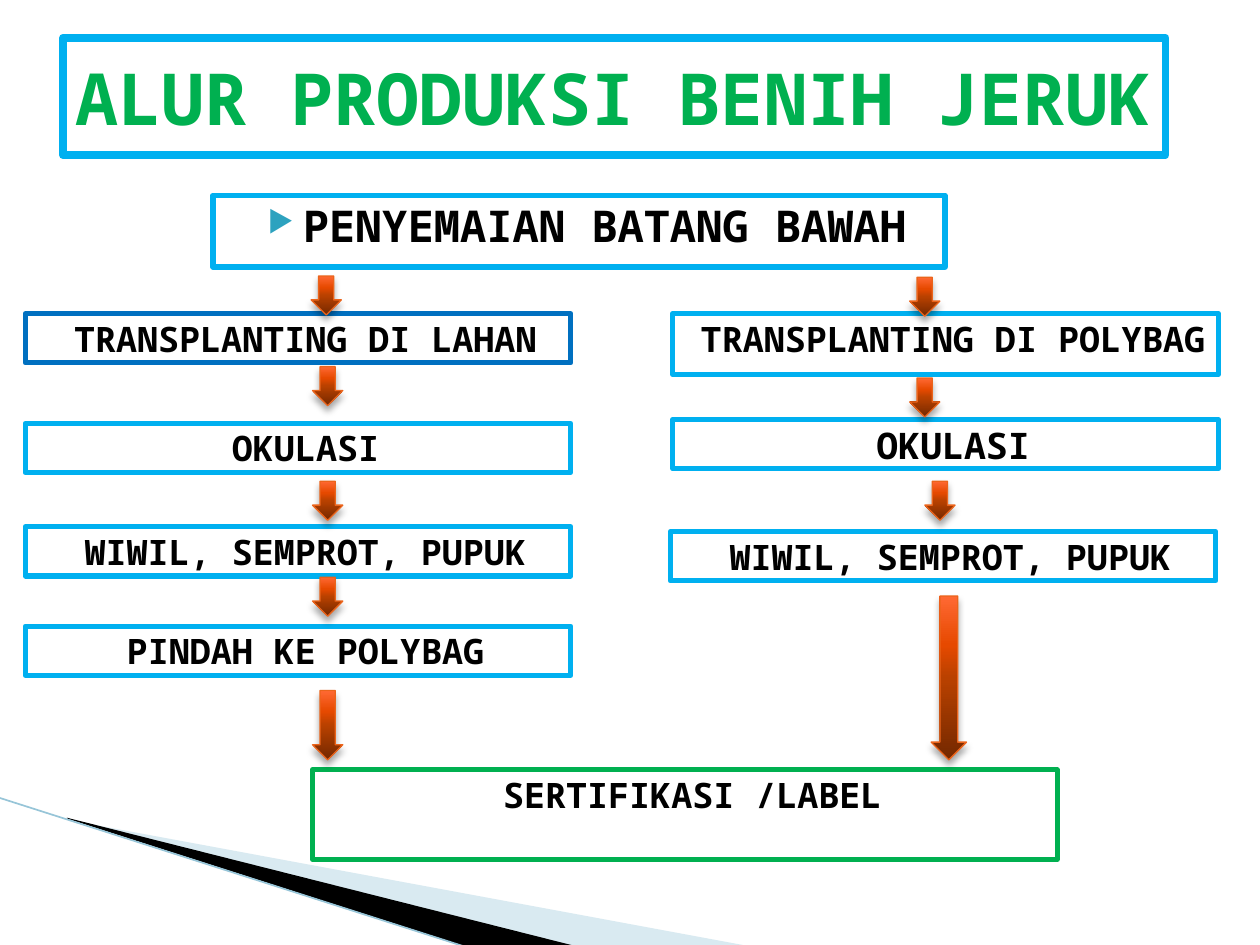
from lxml import etree
from pptx import Presentation, oxml
from pptx import util as u
from pptx.dml.color import RGBColor
from pptx.enum import shapes, text
from pptx.oxml.ns import qn

Pt = u.Pt
FONT = "Noto Sans Mono"
SKY, BLUE, GREEN = "00B0F0", "0070C0", "00B050"
NS = 'xmlns:a="http://schemas.openxmlformats.org/drawingml/2006/main"'
ARROW_STOPS = [(0, "732800"), (50, "B94100"), (70, "E64900"), (100, "FF6933")]
STEP_W, STEP_H = 311.8, 28.1
ARROW_W, ARROW_H = 17.3, 22.3


def rgb(value):
    return RGBColor.from_string(value)


def set_all(target, values):
    for name, value in values.items():
        setattr(target, name, value)


def add_box(slide, words, left, top, width, height, line=SKY, weight=3, size=20,
            color="000000", indent=8.6, hanging=0, fill="FFFFFF", bullet=None,
            align=text.PP_ALIGN.CENTER, anchor=text.MSO_ANCHOR.TOP):
    """Outlined rectangle with one line of bold text."""
    box = slide.shapes.add_shape(shapes.MSO_SHAPE.RECTANGLE,
                                 Pt(left), Pt(top), Pt(width), Pt(height))
    box.shadow.inherit = False
    if fill:
        box.fill.solid()
        box.fill.fore_color.rgb = rgb(fill)
    else:
        box.fill.background()
    box.line.color.rgb = rgb(line)
    box.line.width = Pt(weight)
    set_all(box.text_frame, {"word_wrap": True, "vertical_anchor": anchor,
                             "margin_left": Pt(7.2), "margin_right": Pt(7),
                             "margin_top": Pt(2), "margin_bottom": Pt(2)})
    label = box.text_frame.paragraphs[0]
    label.alignment = align
    props = label._p.get_or_add_pPr()
    props.set("marL", str(Pt(indent)))
    props.set("indent", str(Pt(hanging)))
    if bullet:
        tint = etree.SubElement(props, qn("a:buClr"))
        etree.SubElement(tint, qn("a:srgbClr"), val="2DA2BF")
        etree.SubElement(props, qn("a:buSzPct"), val="68000")
        etree.SubElement(props, qn("a:buChar"), char=bullet)
    run = label.add_run()
    run.text = words
    set_all(run.font, {"name": FONT, "size": Pt(size), "bold": True})
    run.font.color.rgb = rgb(color)


def add_arrow(slide, left, top, width=ARROW_W, height=ARROW_H):
    """Down arrow with an orange gradient and a soft shadow."""
    arrow = slide.shapes.add_shape(shapes.MSO_SHAPE.DOWN_ARROW,
                                   Pt(left), Pt(top), Pt(width), Pt(height))
    arrow.line.color.rgb = rgb("EB641B")
    arrow.line.width = Pt(0.75)
    stops = "".join(f'<a:gs pos="{pos * 1000}"><a:srgbClr val="{color}"/></a:gs>'
                    for pos, color in ARROW_STOPS)
    gradient = oxml.parse_xml(f'<a:gradFill {NS} rotWithShape="1"><a:gsLst>{stops}</a:gsLst>'
                              '<a:lin ang="16200000" scaled="0"/></a:gradFill>')
    shadow = oxml.parse_xml(
        f'<a:effectLst {NS}><a:outerShdw blurRad="{Pt(4)}" dist="{Pt(3)}" dir="5400000" '
        'rotWithShape="0"><a:srgbClr val="000000"><a:alpha val="35000"/></a:srgbClr>'
        '</a:outerShdw></a:effectLst>')
    props = arrow._element.spPr
    props.find(qn("a:prstGeom")).addnext(gradient)
    props.append(shadow)


def add_wedge(slide, points, color, opacity=100):
    """Filled polygon without an outline."""
    corners = [(Pt(x), Pt(y)) for x, y in points]
    builder = slide.shapes.build_freeform(*corners[0])
    builder.add_line_segments(corners[1:])
    wedge = builder.convert_to_shape()
    wedge.shadow.inherit = False
    wedge.fill.solid()
    wedge.fill.fore_color.rgb = rgb(color)
    wedge.line.fill.background()
    if opacity < 100:
        tint = wedge._element.spPr.find(qn("a:solidFill"))[0]
        etree.SubElement(tint, qn("a:alpha"), val=str(opacity * 1000))


def add_line(slide, x1, y1, x2, y2, color, weight):
    line = slide.shapes.add_connector(shapes.MSO_CONNECTOR.STRAIGHT,
                                      Pt(x1), Pt(y1), Pt(x2), Pt(y2))
    line.line.color.rgb = rgb(color)
    line.line.width = Pt(weight)
    etree.SubElement(line._element.spPr, qn("a:effectLst"))


def main():
    prs = Presentation()
    prs.slide_width, prs.slide_height = Pt(720), Pt(540)
    slide = prs.slides.add_slide(prs.slide_layouts[6])

    # Corner decoration
    add_wedge(slide, [(39.6, 468.7), (428.4, 540.7), (328.3, 540.7), (39.6, 468)],
              "A0CBDC", 40)
    add_wedge(slide, [(38.2, 467.3), (329, 540.7), (267.8, 541.4), (38.9, 468)], "000000")
    add_line(slide, -0.7, 455.8, 267.1, 541.4, "97C5D8", 0.95)

    # Title and starting step
    add_box(slide, "PENYEMAIAN BATANG BAWAH", 121.7, 111.6, 418.3, 41, size=25,
            indent=28.8, hanging=-20.2, bullet="▶")
    add_box(slide, "ALUR PRODUKSI BENIH JERUK", 36, 21.6, 630, 67, weight=4.5, size=41,
            color=GREEN, fill=None, indent=0, align=text.PP_ALIGN.LEFT,
            anchor=text.MSO_ANCHOR.MIDDLE)

    # Steps in the field (left) and in polybags (right)
    steps = [
        ("TRANSPLANTING DI LAHAN", 14.4, 179.3, STEP_H, BLUE, 20),
        ("OKULASI", 14.4, 241.9, STEP_H, SKY, 20),
        ("WIWIL, SEMPROT, PUPUK", 14.4, 301, STEP_H, SKY, 20),
        ("PINDAH KE POLYBAG", 14.4, 357.8, STEP_H, SKY, 20),
        ("TRANSPLANTING DI POLYBAG", 384.5, 179.3, 34.6, SKY, 20),
        ("OKULASI", 384.5, 239.8, STEP_H, SKY, 20.9),
        ("WIWIL, SEMPROT, PUPUK", 383, 303.8, STEP_H, SKY, 20),
    ]
    for words, left, top, height, line, size in steps:
        add_box(slide, words, left, top, STEP_W, height, line=line, size=size)

    # Shared final step
    add_box(slide, "SERTIFIKASI /LABEL", 178.6, 439.9, 425.5, 51.1, line=GREEN)

    # Arrows between steps
    for left, top in [(177.8, 157.7), (178.6, 209.5), (178.6, 275), (178.6, 329.8),
                      (519.8, 158.4), (519.8, 216), (528.5, 275)]:
        add_arrow(slide, left, top)
    add_arrow(slide, 178.6, 394.6, height=39.6)
    add_arrow(slide, 532.1, 340.6, width=20.2, height=93.6)

    prs.save("out.pptx")


if __name__ == "__main__":
    main()
